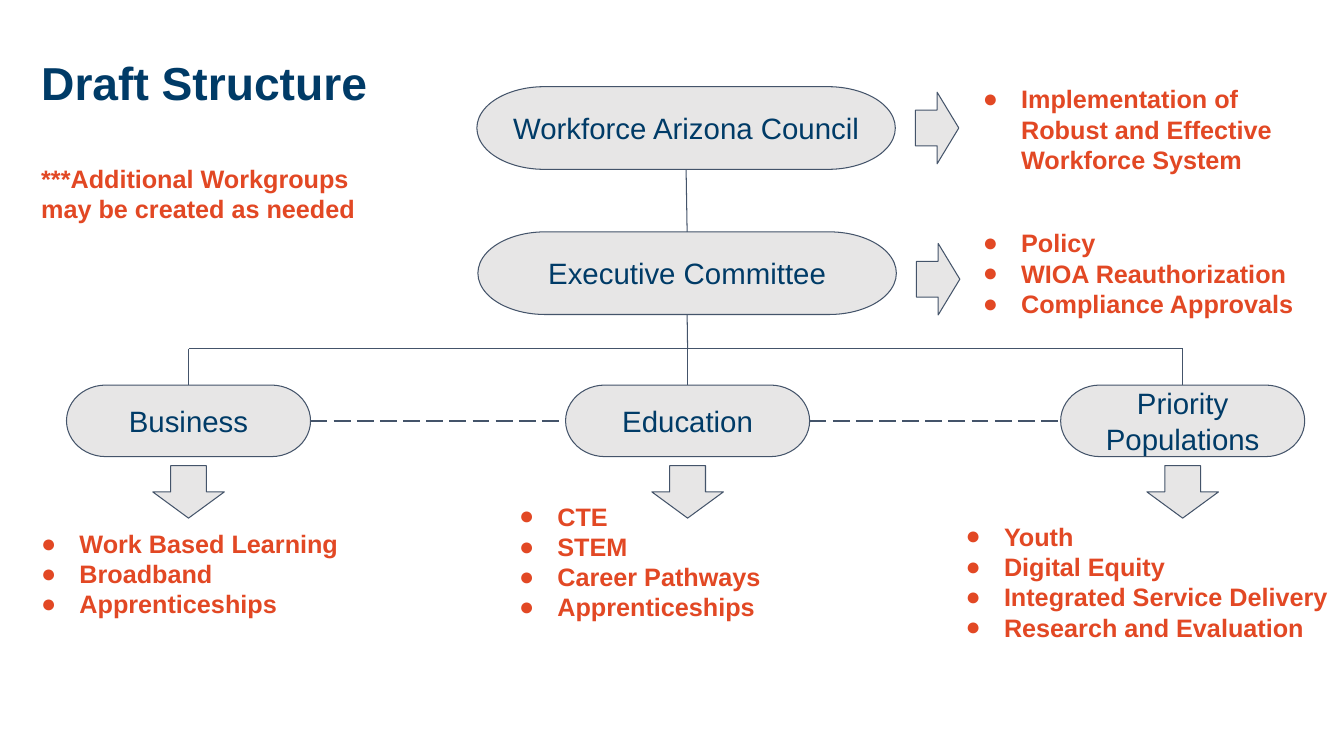
from collections import namedtuple

from lxml.etree import SubElement
from pptx import Presentation
from pptx.dml.color import RGBColor
from pptx.enum.dml import MSO_LINE
from pptx.enum.shapes import MSO_CONNECTOR, MSO_SHAPE
from pptx.enum.text import MSO_ANCHOR, MSO_AUTO_SIZE, PP_ALIGN
from pptx.oxml.ns import qn
from pptx.util import Inches, Pt

Box = namedtuple("Box", "left top width height")

NAVY, ORANGE, GREY, SLATE = "003B67", "E24824", "E7E6E6", "44546A"
TOP, LEFT, BOTTOM, RIGHT = range(4)
BRANCH_HEIGHT = 3.46

# Pill box, name, arrow centre below pill centre, list box, list items
LEVELS = [
    (Box(4.73, 0.86, 4.15, 0.82), "Workforce Arizona Council", 0,
     Box(9.53, 0.73, 3.58, 1.11),
     ["Implementation of Robust and Effective Workforce System"]),
    (Box(4.74, 2.3, 4.15, 0.82), "Executive Committee", 0.06,
     Box(9.53, 2.16, 3.67, 1.11),
     ["Policy", "WIOA Reauthorization", "Compliance Approvals"]),
]
# Pill box, name, list box, list items
WORKGROUPS = [
    (Box(0.66, 3.82, 2.42, 0.71), "Business", Box(0.19, 5.14, 3.7, 1.11),
     ["Work Based Learning", "Broadband", "Apprenticeships"]),
    (Box(5.61, 3.82, 2.42, 0.71), "Education", Box(4.93, 4.87, 3.39, 1.41),
     ["CTE", "STEM", "Career Pathways", "Apprenticeships"]),
    (Box(10.52, 3.82, 2.42, 0.71), "Priority Populations", Box(9.36, 5.07, 3.97, 1.41),
     ["Youth", "Digital Equity", "Integrated Service Delivery", "Research and Evaluation"]),
]


def color(value):
    return RGBColor.from_string(value)


def add_span(para, text, size, value, bold=True):
    span = para.add_run()
    span.text = text
    span.font.name = "Arial"
    span.font.size = Pt(size)
    span.font.bold = bold
    span.font.color.rgb = color(value)


def set_margins(frame):
    frame.word_wrap = True
    frame.margin_left = frame.margin_right = Inches(0.1)
    frame.margin_top = frame.margin_bottom = Inches(0.1)


def add_text_frame(slide, box):
    frame = slide.shapes.add_textbox(*map(Inches, box)).text_frame
    set_margins(frame)
    frame.auto_size = MSO_AUTO_SIZE.SHAPE_TO_FIT_TEXT
    return frame


def add_outlined_shape(slide, kind, box):
    shape = slide.shapes.add_shape(kind, *map(Inches, box))
    shape.shadow.inherit = False
    shape.fill.solid()
    shape.fill.fore_color.rgb = color(GREY)
    shape.line.color.rgb = color(SLATE)
    shape.line.width = Pt(0.75)
    return shape


def add_pill(slide, box, name):
    pill = add_outlined_shape(slide, MSO_SHAPE.FLOWCHART_TERMINATOR, box)
    frame = pill.text_frame
    set_margins(frame)
    frame.vertical_anchor = MSO_ANCHOR.MIDDLE
    para = frame.paragraphs[0]
    para.alignment = PP_ALIGN.CENTER
    add_span(para, name, 21, NAVY, bold=False)
    return pill


def add_bullet_list(slide, box, items):
    frame = add_text_frame(slide, box)
    for index, item in enumerate(items):
        para = frame.add_paragraph() if index else frame.paragraphs[0]
        properties = para._p.get_or_add_pPr()
        properties.set("marL", str(Inches(0.5)))
        properties.set("indent", str(Inches(-0.38)))
        bullet_color = SubElement(properties, qn("a:buClr"))
        SubElement(bullet_color, qn("a:srgbClr"), val=ORANGE)
        SubElement(properties, qn("a:buFont"), typeface="Arial")
        SubElement(properties, qn("a:buChar"), char="●")
        add_span(para, item, 18, ORANGE)


def add_line(slide, start=(0, 0), end=(0, 0), begin_at=None, end_at=None, dashed=False):
    """Draw a line between points, or join it to (shape, side) pairs."""
    line = slide.shapes.add_connector(MSO_CONNECTOR.STRAIGHT, *map(Inches, (*start, *end)))
    if begin_at:
        line.begin_connect(*begin_at)
    if end_at:
        line.end_connect(*end_at)
    line.line.color.rgb = color(SLATE)
    line.line.width = Pt(1.5 if dashed else 0.75)
    if dashed:
        line.line.dash_style = MSO_LINE.LONG_DASH
    SubElement(line._element.spPr, qn("a:effectLst"))


def add_heading(slide, box):
    frame = add_text_frame(slide, box)
    add_span(frame.paragraphs[0], "Draft Structure", 33, NAVY)
    note = frame.add_paragraph()
    note.space_before = Pt(38)
    add_span(note, "***Additional Workgroups may be created as needed", 18, ORANGE)


def add_level(slide, box, name, arrow_drop, list_box, items):
    """Place a governing body with its duties to the right."""
    pill = add_pill(slide, box, name)
    middle = box.top + box.height / 2 + arrow_drop
    arrow_box = Box(box.left + box.width + 0.2, middle - 0.355, 0.43, 0.71)
    add_outlined_shape(slide, MSO_SHAPE.RIGHT_ARROW, arrow_box)
    add_bullet_list(slide, list_box, items)
    return pill


def add_workgroup(slide, box, name, list_box, items):
    """Place a workgroup with its topics below and its drop from the branch above."""
    pill = add_pill(slide, box, name)
    center = box.left + box.width / 2
    arrow_box = Box(center - 0.355, box.top + box.height + 0.09, 0.71, 0.52)
    add_outlined_shape(slide, MSO_SHAPE.DOWN_ARROW, arrow_box)
    add_bullet_list(slide, list_box, items)
    add_line(slide, (center, BRANCH_HEIGHT), end_at=(pill, TOP))
    return pill


def add_structure(slide):
    council, committee = [add_level(slide, *level) for level in LEVELS]
    pills = [add_workgroup(slide, *group) for group in WORKGROUPS]

    # Council, committee and the branch to the workgroups
    centers = [box.left + box.width / 2 for box, *_ in WORKGROUPS]
    add_line(slide, begin_at=(council, BOTTOM), end_at=(committee, TOP))
    add_line(slide, end=(centers[1], BRANCH_HEIGHT), begin_at=(committee, BOTTOM))
    add_line(slide, (centers[0], BRANCH_HEIGHT), (centers[-1], BRANCH_HEIGHT))

    # Dashed links between neighbouring workgroups
    for first, second in zip(pills, pills[1:]):
        add_line(slide, begin_at=(first, RIGHT), end_at=(second, LEFT), dashed=True)


def main():
    deck = Presentation()
    deck.slide_width, deck.slide_height = Inches(13.33), Inches(7.5)
    slide = deck.slides.add_slide(deck.slide_layouts[6])
    add_structure(slide)
    add_heading(slide, Box(0.31, 0.44, 3.79, 1.92))
    deck.save("out.pptx")


if __name__ == "__main__":
    main()
